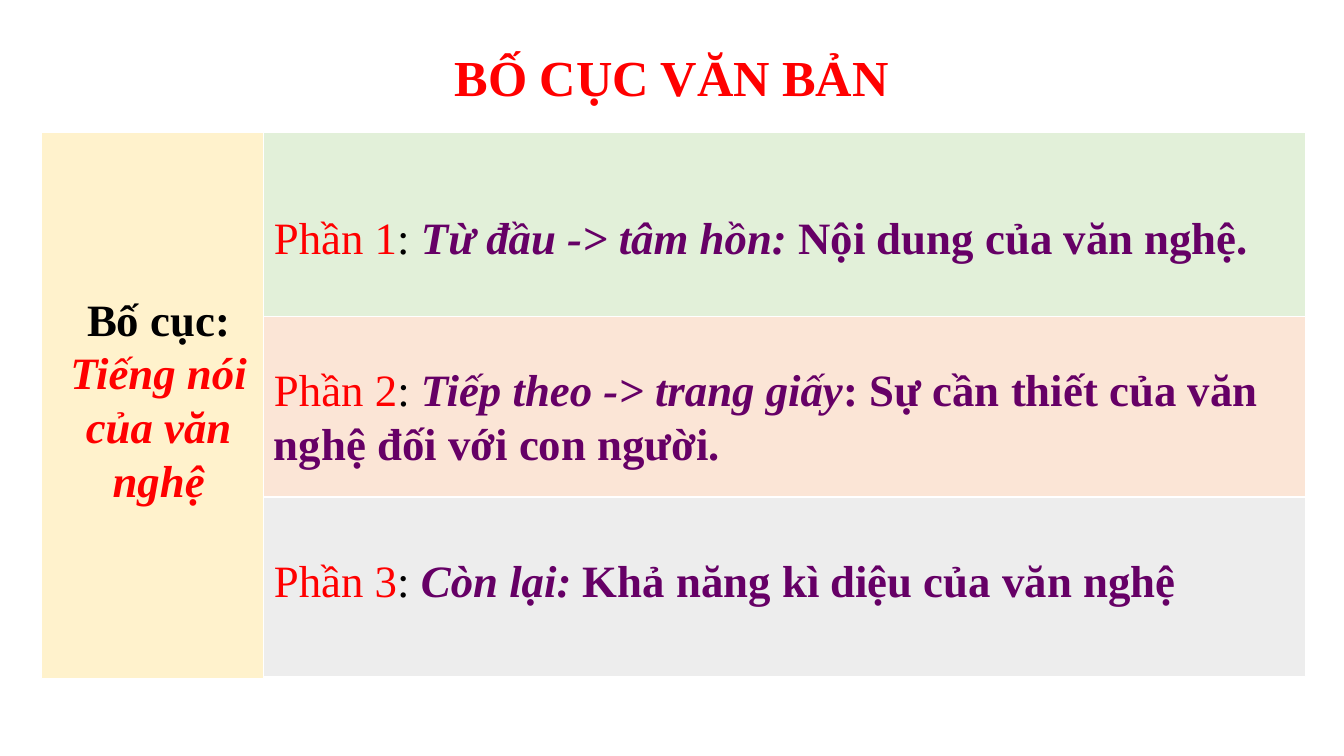
"""Builds the slide that outlines the three parts of the text."""
import dataclasses

import pptx
import pptx.dml.color
import pptx.enum.shapes
import pptx.enum.text
import pptx.util

Pt = pptx.util.Pt
ALIGN = pptx.enum.text.PP_ALIGN


@dataclasses.dataclass(frozen=True)
class Theme:
    """Colours, font and type sizes of the slide."""
    font: str = "Times New Roman"
    title_size: int = 36
    body_size: int = 32
    red: str = "FF0000"
    black: str = "000000"
    purple: str = "660066"
    white: str = "FFFFFF"
    cream: str = "FFF2CC"
    green: str = "E2F0D9"
    peach: str = "FBE5D6"
    grey: str = "EDEDED"


THEME = Theme()
STYLES = {
    "title": {"color": THEME.red, "bold": True, "size": THEME.title_size},
    "heading": {"color": THEME.black, "bold": True},
    "work": {"color": THEME.red, "bold": True, "italic": True},
    "label": {"color": THEME.red},
    "colon": {"color": THEME.black},
    "range": {"color": THEME.purple, "bold": True, "italic": True},
    "content": {"color": THEME.purple, "bold": True},
}
PANEL_LEFT, PANEL_WIDTH = 188.6, 743.8
PARTS = [
    {"top": 94.3, "height": 131.8, "fill": THEME.green, "text_box": (146.2, 743.8, 46),
     "spans": [("Phần 1", "label"), (": ", "colon"),
               ("Từ đầu -> tâm hồn: ", "range"),
               ("Nội dung của văn nghệ.", "content")]},
    {"top": 226.1, "height": 131.8, "fill": THEME.peach, "text_box": (254.9, 761.8, 85),
     "spans": [("Phần 2", "label"), (": ", "colon"),
               ("Tiếp theo -> trang giấy", "range"),
               (": Sự cần thiết của văn nghệ đối với con người.", "content")]},
    {"top": 355, "height": 128.2, "fill": THEME.grey, "text_box": (391, 703.4, 46),
     "spans": [("Phần 3", "label"), (": ", "colon"),
               ("Còn lại: ", "range"),
               ("Khả năng kì diệu của văn nghệ", "content")]},
]


def rgb(value):
    """Turn a hex string into a colour."""
    return pptx.dml.color.RGBColor.from_string(value)


def set_attributes(target, values):
    """Set each named attribute on the target."""
    for name, value in values.items():
        setattr(target, name, value)


def write_paragraph(paragraph, spans, alignment):
    """Fill a paragraph with styled runs."""
    paragraph.alignment = alignment
    for text, style in spans:
        run = paragraph.add_run()
        run.text = text
        values = {"name": THEME.font, "size": THEME.body_size,
                  "bold": False, "italic": False, **STYLES[style]}
        run.font.color.rgb = rgb(values.pop("color"))
        set_attributes(run.font, {**values, "size": Pt(values["size"])})


def add_title(slide, text):
    """Place and format the title placeholder."""
    title = slide.shapes.title
    set_attributes(title, {"left": Pt(316), "top": Pt(28.8),
                           "width": Pt(327.6), "height": Pt(51)})
    set_attributes(title.text_frame, {
        "word_wrap": False, "auto_size": pptx.enum.text.MSO_AUTO_SIZE.NONE,
        "vertical_anchor": pptx.enum.text.MSO_ANCHOR.MIDDLE})
    paragraph = title.text_frame.paragraphs[0]
    paragraph.line_spacing = 1.0
    write_paragraph(paragraph, [(text, "title")], ALIGN.CENTER)


def add_panel(slide, left, top, width, height, fill):
    """Add a filled rectangle with a thin white outline."""
    panel = slide.shapes.add_shape(pptx.enum.shapes.MSO_SHAPE.RECTANGLE,
                                   Pt(left), Pt(top), Pt(width), Pt(height))
    panel.shadow.inherit = False
    panel.fill.solid()
    panel.fill.fore_color.rgb = rgb(fill)
    panel.line.color.rgb = rgb(THEME.white)
    panel.line.width = Pt(0.75)


def add_text(slide, left, top, width, height, paragraphs, alignment=ALIGN.LEFT):
    """Add a wrapping text box with one list of spans per paragraph."""
    box = slide.shapes.add_textbox(Pt(left), Pt(top), Pt(width), Pt(height))
    frame = box.text_frame
    frame.word_wrap = True
    for index, spans in enumerate(paragraphs):
        paragraph = frame.add_paragraph() if index else frame.paragraphs[0]
        write_paragraph(paragraph, spans, alignment)


def main():
    """Build and save the presentation."""
    presentation = pptx.Presentation()
    set_attributes(presentation, {"slide_width": Pt(960), "slide_height": Pt(540)})
    slide = presentation.slides.add_slide(presentation.slide_layouts[5])
    add_title(slide, "BỐ CỤC VĂN BẢN")
    add_panel(slide, 29.5, 94.3, 158.7, 390.2, THEME.cream)
    add_text(slide, 38.9, 204.5, 149, 162.7,
             [[("Bố cục:", "heading")], [("Tiếng nói của văn nghệ", "work")]],
             ALIGN.CENTER)
    for part in PARTS:
        add_panel(slide, PANEL_LEFT, part["top"], PANEL_WIDTH, part["height"], part["fill"])
        top, width, height = part["text_box"]
        add_text(slide, PANEL_LEFT, top, width, height, [part["spans"]])
    presentation.save("out.pptx")


if __name__ == "__main__":
    main()
